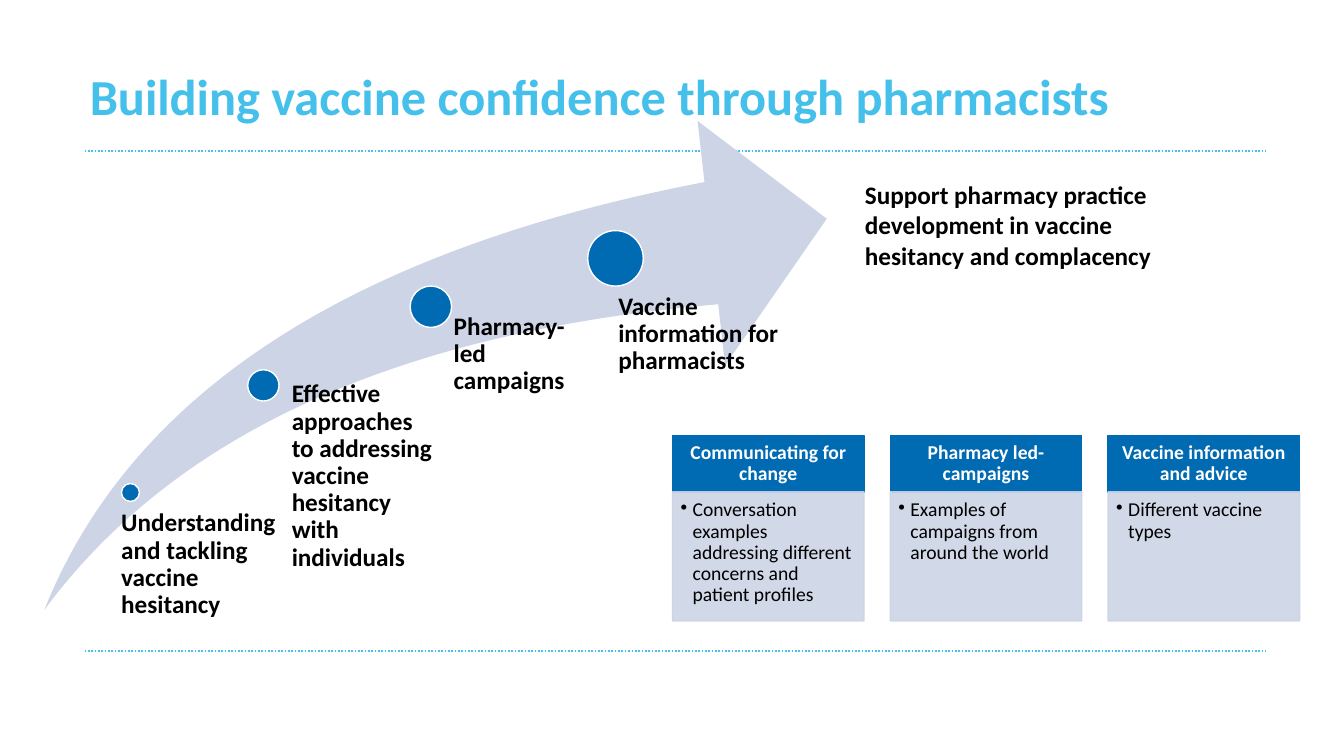
from lxml.etree import SubElement
from pptx import Presentation
from pptx.dml.color import RGBColor
from pptx.enum.dml import MSO_LINE
from pptx.enum.shapes import MSO_CONNECTOR, MSO_SHAPE
from pptx.enum.text import MSO_ANCHOR, MSO_AUTO_SIZE, PP_ALIGN
from pptx.oxml.ns import qn
from pptx.util import Inches, Pt

TITLE = "Building vaccine confidence through pharmacists"
GOAL = "Support pharmacy practice development in vaccine hesitancy and complacency"
# percent
MILESTONES = [
    ("Understanding and tackling vaccine hesitancy", (11, 76, 2.3), (8.6, 79.6, 21.3, 23.7)),
    ("Effective approaches to addressing vaccine hesitancy with individuals",
     (28, 54.1, 4), (29.5, 53.2, 21, 45.8)),
    ("Pharmacy-led campaigns", (49.4, 38, 5.3), (49.5, 39.4, 21, 61.9)),
    ("Vaccine information for pharmacists", (73, 28.1, 7.1), (69.6, 35.3, 27.7, 60.2)),
]
CARDS = [
    ("Communicating for change",
     "Conversation examples addressing different concerns and patient profiles"),
    ("Pharmacy led-campaigns", "Examples of campaigns from around the world"),
    ("Vaccine information and advice", "Different vaccine types"),
]
COLORS = {"sky": "45C0EB", "blue": "006AB3", "mist": "CCD4E5", "white": "FFFFFF", "black": "000000"}
WIDTH, HEIGHT = 13.33, 7.5
RULE_LEFT, RULE_RIGHT, RULE_ROWS = 0.84, 12.55, (1.5, 6.46)
ARROW = (0.44, 1.2, 7.76, 4.85)
CARD_LEFT, CARD_TOP, CARD_WIDTH, CARD_PITCH = 6.67, 4.32, 1.9, 2.16
HEAD_HEIGHT, BODY_HEIGHT = 0.56, 1.28
DEFAULT_INSETS = (0.1, 0.05, 0.1, 0.05)


def color(name):
    return RGBColor.from_string(COLORS[name])


def write(holder, text, size, ink, insets=DEFAULT_INSETS, bold=True, spacing=0.9,
          align=PP_ALIGN.LEFT, anchor=MSO_ANCHOR.TOP, bullet=False):
    frame = holder.text_frame
    sides = zip(("margin_left", "margin_top", "margin_right", "margin_bottom"), map(Inches, insets))
    frame_format = {"word_wrap": True, "auto_size": MSO_AUTO_SIZE.NONE,
                    "vertical_anchor": anchor, **dict(sides)}
    for key, value in frame_format.items():
        setattr(frame, key, value)
    frame.text = text
    paragraph = frame.paragraphs[0]
    paragraph.alignment, paragraph.line_spacing = align, spacing
    if bullet:
        properties = paragraph._p.get_or_add_pPr()
        properties.set("marL", str(Inches(0.12)))
        properties.set("indent", str(Inches(-0.12)))
        SubElement(properties, qn("a:buChar")).set("char", "•")
    font = paragraph.runs[0].font
    for key, value in {"name": "Calibri", "size": Pt(size), "bold": bold}.items():
        setattr(font, key, value)
    font.color.rgb = color(ink)


def add_form(preset, box, fill, line=None, alpha=None):
    form = slide.shapes.add_shape(preset, *map(Inches, box))
    form.shadow.inherit = False
    form.fill.solid()
    form.fill.fore_color.rgb = color(fill)
    if line:
        form.line.color.rgb = color(line)
        form.line.width = Pt(1)
    else:
        form.line.fill.background()
    if alpha:
        for tint in form._element.spPr.iter(qn("a:srgbClr")):
            SubElement(tint, qn("a:alpha")).set("val", str(alpha * 1000))
    return form


def add_label(box, text, **format_values):
    write(slide.shapes.add_textbox(*map(Inches, box)), text, 18, "black", **format_values)


def add_rule(row):
    rule = slide.shapes.add_connector(MSO_CONNECTOR.STRAIGHT, Inches(RULE_LEFT), Inches(row),
                                      Inches(RULE_RIGHT), Inches(row))
    rule.line.color.rgb = color("sky")
    rule.line.width, rule.line.dash_style = Pt(1.2), MSO_LINE.ROUND_DOT
    SubElement(rule._element.spPr, qn("a:effectLst"))


def add_milestone(text, dot, label):
    left, top, width, height = ARROW
    x, y, size = left + dot[0] * width / 100, top + dot[1] * height / 100, dot[2] * width / 100
    add_form(MSO_SHAPE.OVAL, (x - size / 2, y - size / 2, size, size), "blue", "white")
    box = (left + label[0] * width / 100, top + label[1] * height / 100,
           label[2] * width / 100, label[3] * height / 100)
    add_label(box, text, insets=(size * 0.53, 0, 0, 0))


def add_card(column, heading, example):
    left = CARD_LEFT + column * CARD_PITCH
    head = add_form(MSO_SHAPE.RECTANGLE, (left, CARD_TOP, CARD_WIDTH, HEAD_HEIGHT), "blue", "blue")
    write(head, heading, 14, "white", insets=(0.11, 0.06, 0.11, 0.06),
          align=PP_ALIGN.CENTER, anchor=MSO_ANCHOR.MIDDLE)
    body = add_form(MSO_SHAPE.RECTANGLE, (left, CARD_TOP + HEAD_HEIGHT, CARD_WIDTH, BODY_HEIGHT),
                    "mist", "mist", alpha=90)
    write(body, example, 14, "black", insets=(0.08, 0.08, 0.11, 0.12), bold=False, bullet=True)


deck = Presentation()
deck.slide_width, deck.slide_height = Inches(WIDTH), Inches(HEIGHT)
slide = deck.slides.add_slide(deck.slide_layouts[5])

title = slide.shapes.title
for key, value in zip(("left", "top", "width", "height"), (0.79, 0.66, 11.76, 0.63)):
    setattr(title, key, Inches(value))
write(title, TITLE, 36, "sky")

for row in RULE_ROWS:
    add_rule(row)

swoosh = add_form(MSO_SHAPE.SWOOSH_ARROW, ARROW, "mist")
for index in range(2):
    swoosh.adjustments[index] = 0.25
for milestone in MILESTONES:
    add_milestone(*milestone)

add_label((8.48, 1.73, 3.28, 1.01), GOAL, spacing=1.0)
for column, card in enumerate(CARDS):
    add_card(column, *card)

deck.save("out.pptx")
